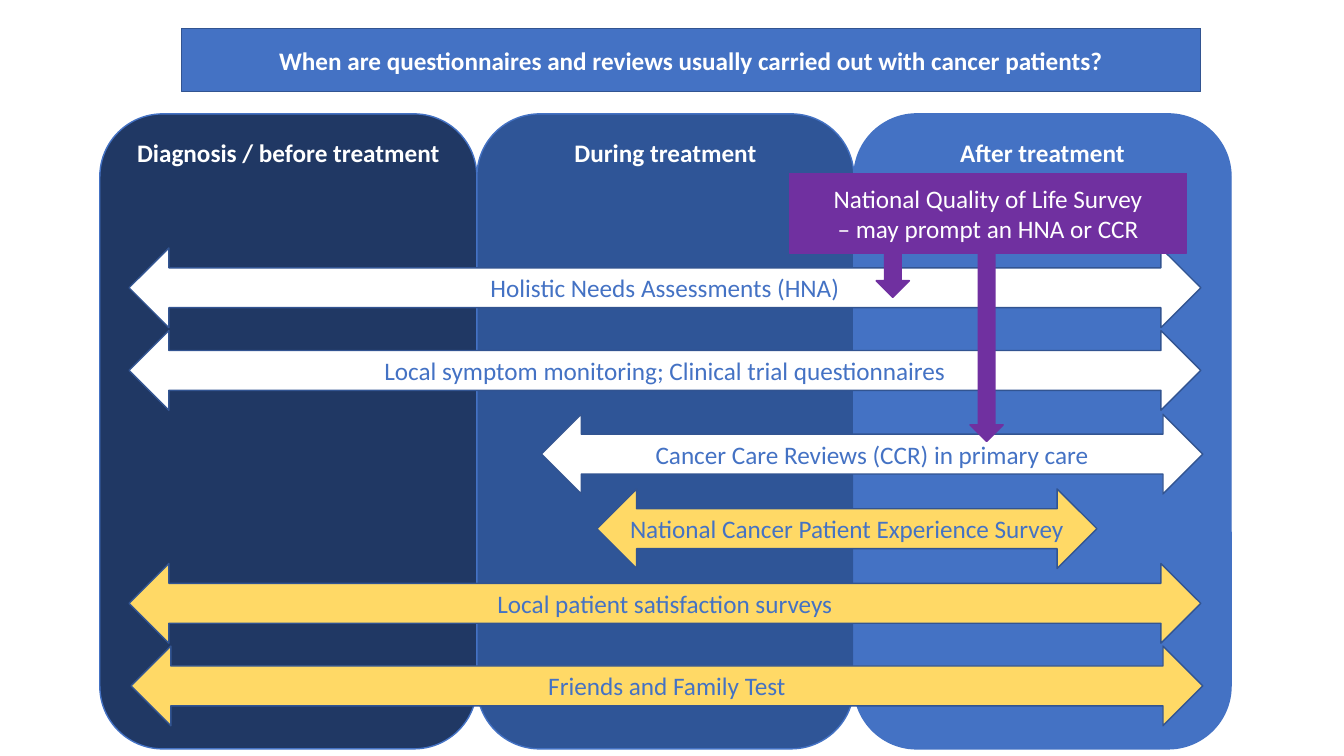
from dataclasses import dataclass

import pptx
import pptx.util
from lxml import etree
from pptx.dml.color import RGBColor
from pptx.enum.shapes import MSO_SHAPE
from pptx.enum.text import MSO_ANCHOR, MSO_AUTO_SIZE, PP_ALIGN
from pptx.oxml.ns import qn

PX = 9144  # EMU, 100 px to the inch
FONT = "Calibri"
WHITE = RGBColor(0xFF, 0xFF, 0xFF)
NAVY = RGBColor(0x20, 0x38, 0x64)
MID_BLUE = RGBColor(0x2F, 0x55, 0x97)
BLUE = RGBColor(0x44, 0x72, 0xC4)
OUTLINE = RGBColor(0x32, 0x54, 0x91)
YELLOW = RGBColor(0xFF, 0xD9, 0x66)
PURPLE = RGBColor(0x70, 0x30, 0xA0)

STAGE_LEFT, STAGE_TOP, STAGE_WIDTH, STAGE_HEIGHT = 99, 113, 374, 630
ARROW_HEIGHT = 79


@dataclass
class Stage:
    name: str
    fill: RGBColor


@dataclass
class Activity:
    name: str
    left: int
    top: int
    width: int
    fill: RGBColor


@dataclass
class Prompt:
    left: int
    top: int
    height: int


STAGES = [
    Stage("Diagnosis / before treatment", NAVY),
    Stage("During treatment", MID_BLUE),
    Stage("After treatment", BLUE),
]
ACTIVITIES = [
    Activity("Holistic Needs Assessments (HNA)", 128, 246, 1063, WHITE),
    Activity("Local symptom monitoring; Clinical trial questionnaires", 128, 328, 1063, WHITE),
    Activity("Friends and Family Test", 130, 641, 1063, YELLOW),
    Activity("Local patient satisfaction surveys", 128, 559, 1063, YELLOW),
    Activity("Cancer Care Reviews (CCR) in primary care", 537, 411, 656, WHITE),
    Activity("National Cancer Patient Experience Survey", 592, 485, 496, YELLOW),
]
PROMPTS = [Prompt(869, 232, 63), Prompt(962, 230, 208)]
PROMPT_WIDTH = 33


def paint(shape, fill: RGBColor, line: RGBColor) -> None:
    shape.fill.solid()
    shape.fill.fore_color.rgb = fill
    shape.line.color.rgb = line
    shape.line.width = pptx.util.Pt(1)


def write(shape, lines: list[str], color: RGBColor, bold: bool = False,
          anchor: MSO_ANCHOR = MSO_ANCHOR.MIDDLE) -> None:
    frame = shape.text_frame
    frame.word_wrap = True
    frame.auto_size = MSO_AUTO_SIZE.NONE
    frame.vertical_anchor = anchor
    for index, line in enumerate(lines):
        para = frame.add_paragraph() if index else frame.paragraphs[0]
        para.alignment = PP_ALIGN.CENTER
        para.line_spacing = 1.0
        span = para.add_run()
        span.text = line
        span.font.name = FONT
        span.font.size = pptx.util.Pt(18)
        span.font.bold = bold
        span.font.color.rgb = color


def add_box(page, kind: MSO_SHAPE, left: int, top: int, width: int, height: int,
            fill: RGBColor, line: RGBColor):
    box = page.shapes.add_shape(kind, left * PX, top * PX, width * PX, height * PX)
    box.shadow.inherit = False
    paint(box, fill, line)
    return box


def format_title(page) -> None:
    """Turn the title placeholder into the rounded heading bar."""
    title = page.shapes.title
    title.left, title.top = 180 * PX, 28 * PX
    title.width, title.height = 1011 * PX, 63 * PX
    outline = etree.SubElement(title.element.spPr, qn("a:prstGeom"), prst="roundRect")
    etree.SubElement(outline, qn("a:avLst"))
    paint(title, BLUE, OUTLINE)
    write(title, ["When are questionnaires and reviews usually carried out with cancer patients?"],
          WHITE, bold=True)


def main() -> None:
    deck = pptx.Presentation()
    deck.slide_width, deck.slide_height = 1333 * PX, 750 * PX
    page = deck.slides.add_slide(deck.slide_layouts.get_by_name("Title Only"))
    format_title(page)

    for index, stage in enumerate(STAGES):
        column = add_box(page, MSO_SHAPE.ROUNDED_RECTANGLE, STAGE_LEFT + index * STAGE_WIDTH,
                         STAGE_TOP, STAGE_WIDTH, STAGE_HEIGHT, stage.fill, BLUE)
        write(column, [stage.name], WHITE, bold=True, anchor=MSO_ANCHOR.TOP)

    for activity in ACTIVITIES:
        arrow = add_box(page, MSO_SHAPE.LEFT_RIGHT_ARROW, activity.left, activity.top,
                        activity.width, ARROW_HEIGHT, activity.fill, OUTLINE)
        write(arrow, [activity.name], BLUE)

    for prompt in PROMPTS:
        add_box(page, MSO_SHAPE.DOWN_ARROW, prompt.left, prompt.top, PROMPT_WIDTH,
                prompt.height, PURPLE, PURPLE)

    survey = add_box(page, MSO_SHAPE.RECTANGLE, 783, 172, 394, 79, PURPLE, PURPLE)
    write(survey, ["National Quality of Life Survey", "– may prompt an HNA or CCR"], WHITE)

    deck.save("out.pptx")


if __name__ == "__main__":
    main()
